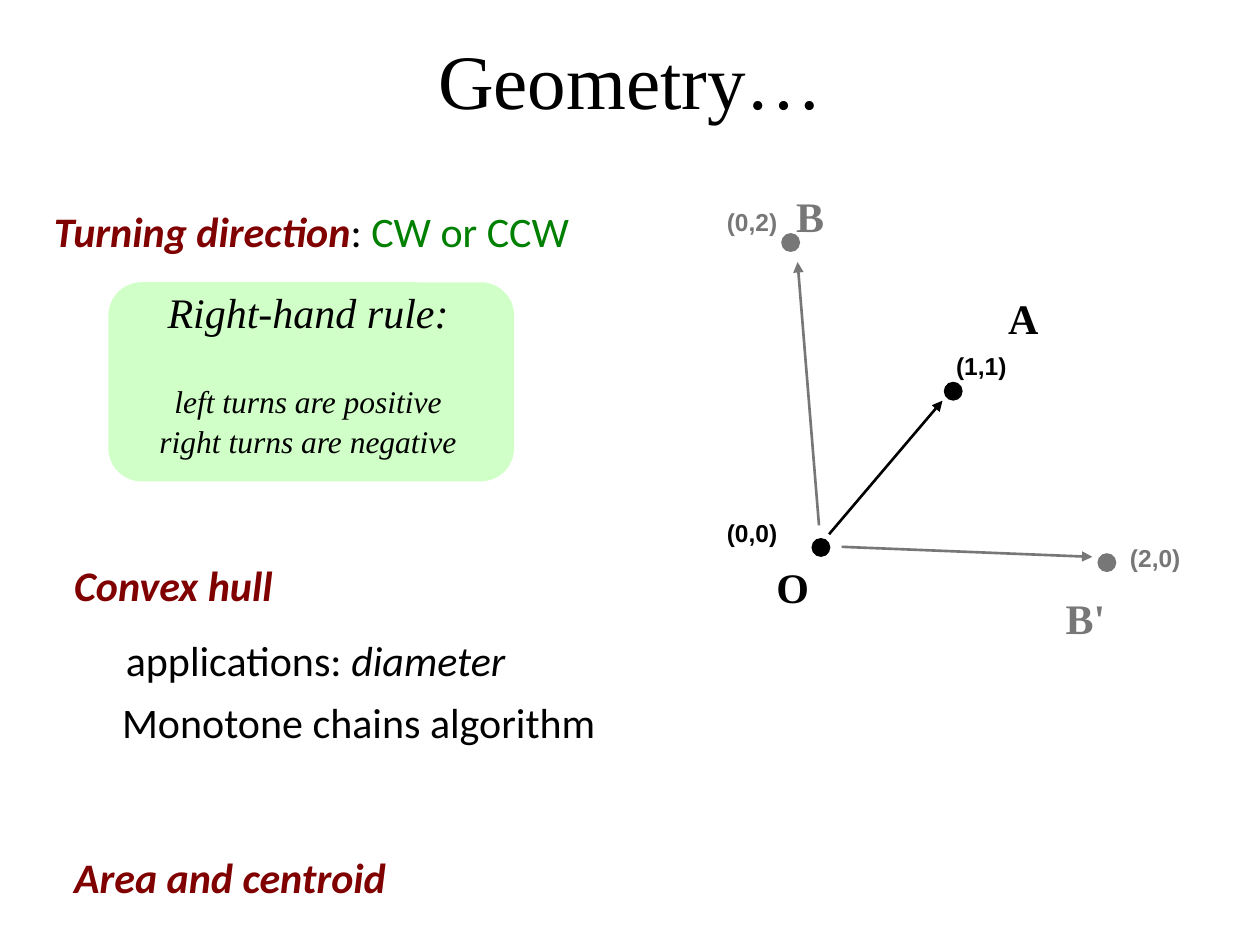
from lxml.etree import SubElement as Sub
from pptx import Presentation
from pptx.dml.color import RGBColor as Color
from pptx.enum.shapes import MSO_CONNECTOR as Link, MSO_SHAPE as Kind
from pptx.enum.text import MSO_AUTO_SIZE as Fit, PP_ALIGN as Align
from pptx.oxml.ns import qn
from pptx.util import Inches, Pt

COLS, ROWS = 10, 7.5  # grid cells are one inch square
SERIF, SANS, BODY = "Times New Roman", "Arial", "Calibri"
BLACK, GRAY, RED, GREEN, MINT = "000000", "777777", "800000", "008000", "D0FFC7"
DOT = 0.15

# tone, dot (col, row), letter, its box (col, row, width), pair, its box
POINTS = [
    (BLACK, (6.44, 4.27), "O", (5.52, 4.37, 1), "(0,0)", (5.67, 4.06)),
    (BLACK, (7.49, 3.03), "A", (7.84, 2.24, 0.5), "(1,1)", (7.49, 2.74)),
    (GRAY, (6.2, 1.85), "B", (5.64, 1.43, 1), "(0,2)", (5.67, 1.59)),
    (GRAY, (8.71, 4.39), "B'", (7.87, 4.62, 1), "(2,0)", (8.87, 4.26)),
]
ARROWS = [
    (BLACK, (6.58, 4.24), (7.48, 3.18)),
    (GRAY, (6.5, 4.17), (6.33, 2.08)),
    (GRAY, (6.68, 4.34), (8.67, 4.42)),
]
# column, row, runs of (text, colour, style)
TOPICS = [
    (0.33, 1.58, [("Turning direction", RED, "bi"), (": ", BLACK, ""),
                  ("CW or CCW", GREEN, "")]),
    (0.49, 4.39, [("Convex hull", RED, "bi")]),
    (0.9, 4.99, [("applications: ", BLACK, ""), ("diameter", BLACK, "i")]),
    (0.87, 5.48, [("Monotone chains algorithm", BLACK, "")]),
    (0.49, 6.71, [("Area and centroid", RED, "bi")]),
]
# text, size, space before
RULE = [("Right-hand rule:", 24, 0), ("left turns are positive", 18, 33),
        ("right turns are negative", 18, 9)]


def rgb(tone):
    return Color.from_string(tone)


def cells(*spans):
    return [Inches(span) for span in spans]


def add_box(slide, col, row, wide, high, wrap=True, drop=0):
    """Add an empty text box; drop is extra room on top, in points."""
    frame = slide.shapes.add_textbox(*cells(col, row, wide, high)).text_frame
    frame.word_wrap = wrap
    frame.auto_size = Fit.SHAPE_TO_FIT_TEXT
    frame.margin_top = Pt(3.6 + drop)
    return frame


def add_run(para, text, face, size, tone=BLACK, style=""):
    run = para.add_run()
    run.text = text
    font = run.font
    font.name, font.size = face, Pt(size)
    font.bold, font.italic = "b" in style, "i" in style
    font.color.rgb = rgb(tone)


def add_shape(slide, kind, tone, *spans):
    shape = slide.shapes.add_shape(kind, *cells(*spans))
    shape.shadow.inherit = False
    shape.fill.solid()
    shape.fill.fore_color.rgb = rgb(tone)
    shape.line.fill.background()


def add_arrow(slide, tone, start, end):
    arrow = slide.shapes.add_connector(Link.STRAIGHT, *cells(*start, *end))
    arrow.line.color.rgb = rgb(tone)
    arrow.line.width = Pt(1.5)
    props = arrow.line._get_or_add_ln()
    Sub(props, qn("a:tailEnd"), type="triangle")
    Sub(props.getparent(), qn("a:effectLst"))


def add_point(slide, tone, dot, name, spot, pair, place):
    add_shape(slide, Kind.OVAL, tone, *dot, DOT, DOT)
    para = add_box(slide, *spot, 0.5, drop=2.4).paragraphs[0]
    para.alignment = Align.RIGHT
    add_run(para, name, SERIF, 24, tone, "b")
    para = add_box(slide, *place, 0.6, 0.34, wrap=False).paragraphs[0]
    add_run(para, pair, SANS, 14, tone, "b")


def add_topic(slide, col, row, runs):
    para = add_box(slide, col, row, 4.75, 0.51).paragraphs[0]
    for text, tone, style in runs:
        add_run(para, text, BODY, 24, tone, style)


def add_rule(slide):
    add_shape(slide, Kind.ROUNDED_RECTANGLE, MINT, 0.86, 2.24, 3.22, 1.58)
    frame = add_box(slide, 0.95, 2.4, 2.99, 1.36, drop=2.4)
    for i, (text, size, gap) in enumerate(RULE):
        para = frame.add_paragraph() if i else frame.paragraphs[0]
        para.alignment = Align.CENTER
        para.line_spacing = Pt(14)
        para.space_before = Pt(gap)
        add_run(para, text, SERIF, size, style="i")


def main():
    deck = Presentation()
    deck.slide_width, deck.slide_height = cells(COLS, ROWS)
    slide = deck.slides.add_slide(deck.slide_layouts[6])

    # Title
    para = add_box(slide, 0.88, 0.15, 8.25, 0.83, drop=4.4).paragraphs[0]
    para.alignment = Align.CENTER
    add_run(para, "Geometry…", SERIF, 44)

    # Vector diagram
    for point in POINTS:
        add_point(slide, *point)
    for arrow in ARROWS:
        add_arrow(slide, *arrow)

    # Topics and the turning rule
    for topic in TOPICS:
        add_topic(slide, *topic)
    add_rule(slide)

    deck.save("out.pptx")


if __name__ == "__main__":
    main()
